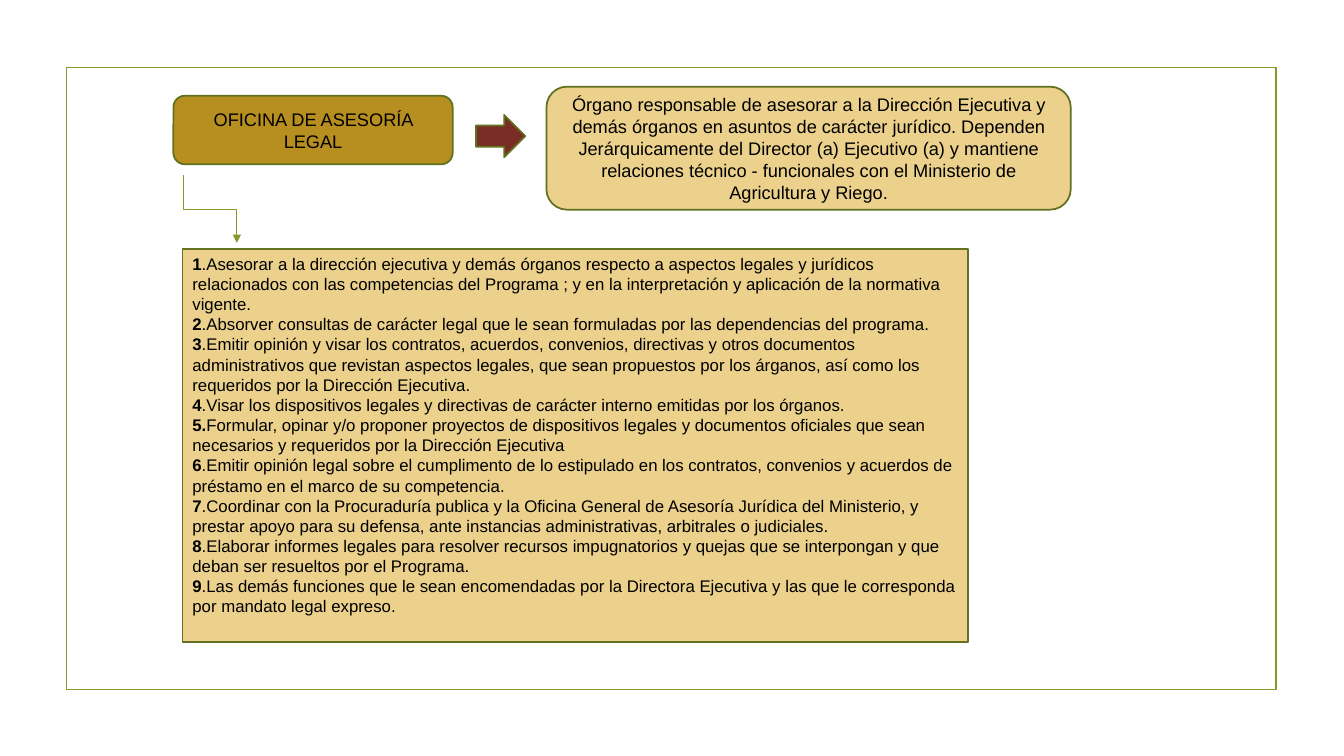
from dataclasses import dataclass
from typing import Optional

import pptx
import pptx.dml.color
import pptx.enum.shapes
import pptx.enum.text
import pptx.oxml
import pptx.oxml.ns
import pptx.util

Inches = pptx.util.Inches
Pt = pptx.util.Pt
RGBColor = pptx.dml.color.RGBColor
Shape = pptx.enum.shapes.MSO_SHAPE
Align = pptx.enum.text.PP_ALIGN

BLACK = RGBColor(0x00, 0x00, 0x00)
GREEN = RGBColor(0x83, 0x99, 0x2A)
DARK_GREEN = RGBColor(0x61, 0x71, 0x1F)
GOLD = RGBColor(0xB7, 0x8E, 0x20)
SAND = RGBColor(0xEB, 0xD1, 0x8C)
MAROON = RGBColor(0x7A, 0x2D, 0x26)


@dataclass
class Block:
    kind: Shape
    left: float
    top: float
    width: float
    height: float
    fill: Optional[RGBColor] = None
    line: RGBColor = DARK_GREEN


FRAME = Block(Shape.RECTANGLE, 0.66, 0.67, 12, 6.17, line=GREEN)
OFFICE = Block(Shape.ROUNDED_RECTANGLE, 1.72, 0.95, 2.77, 0.68, GOLD)
ROLE = Block(Shape.ROUNDED_RECTANGLE, 5.42, 0.86, 5.2, 1.22, SAND)
ARROW = Block(Shape.RIGHT_ARROW, 4.72, 1.14, 0.49, 0.42, MAROON)
DUTIES_BOX = Block(Shape.RECTANGLE, 1.81, 2.47, 7.79, 3.9, SAND)

OFFICE_TEXT = "OFICINA DE ASESORÍA LEGAL"
ROLE_TEXT = (
    "Órgano responsable de asesorar a la Dirección Ejecutiva y demás órganos en asuntos "
    "de carácter jurídico. Dependen Jerárquicamente del Director (a) Ejecutivo (a) y "
    "mantiene relaciones técnico - funcionales con el Ministerio de Agricultura y Riego."
)
DUTIES = [
    ("1", ".Asesorar a la dirección ejecutiva y demás órganos respecto a aspectos legales y "
     "jurídicos relacionados con las competencias del Programa ; y en la interpretación y "
     "aplicación de la normativa vigente."),
    ("2", ".Absorver consultas de carácter legal que le sean formuladas por las dependencias "
     "del programa."),
    ("3", ".Emitir opinión y visar los contratos, acuerdos, convenios, directivas y otros "
     "documentos administrativos que revistan aspectos legales, que sean propuestos por los "
     "árganos, así como los requeridos por la Dirección Ejecutiva."),
    ("4", ".Visar los dispositivos legales y directivas de carácter interno emitidas por los "
     "órganos."),
    ("5.", "Formular, opinar y/o proponer proyectos de dispositivos legales y documentos "
     "oficiales que sean necesarios y requeridos por la Dirección Ejecutiva"),
    ("6", ".Emitir opinión legal sobre el cumplimento de lo estipulado en los contratos, "
     "convenios y acuerdos de préstamo en el marco de su competencia."),
    ("7", ".Coordinar con la Procuraduría publica y la Oficina General de Asesoría Jurídica "
     "del Ministerio, y prestar apoyo para su defensa, ante instancias administrativas, "
     "arbitrales o judiciales."),
    ("8", ".Elaborar informes legales para resolver recursos impugnatorios y quejas que se "
     "interpongan y que deban ser resueltos por el Programa."),
    ("9", ".Las demás funciones que le sean encomendadas por la Directora Ejecutiva y las que "
     "le corresponda por mandato legal expreso."),
]


def add_block(page: pptx.slide.Slide, block: Block) -> pptx.shapes.autoshape.Shape:
    shape = page.shapes.add_shape(
        block.kind, Inches(block.left), Inches(block.top),
        Inches(block.width), Inches(block.height),
    )
    shape.shadow.inherit = False
    if block.fill is None:
        shape.fill.background()
    else:
        shape.fill.solid()
        shape.fill.fore_color.rgb = block.fill
    shape.line.color.rgb = block.line
    shape.line.width = Pt(1.25)
    return shape


def write(box: pptx.shapes.autoshape.Shape, text: list[tuple[str, str]], *, size: float,
          align: Align, bottom: float = 0.05) -> None:
    frame = box.text_frame
    frame.word_wrap = True
    frame.vertical_anchor = pptx.enum.text.MSO_ANCHOR.MIDDLE
    frame.margin_bottom = Inches(bottom)
    for index, (lead, body) in enumerate(text):
        para = frame.add_paragraph() if index else frame.paragraphs[0]
        para.alignment = align
        for words, bold in ((lead, True), (body, False)):
            if words:
                span = para.add_run()
                span.text = words
                span.font.name = "Arial"
                span.font.size = Pt(size)
                span.font.bold = bold
                span.font.color.rgb = BLACK


def add_bent_arrow(page: pptx.slide.Slide, start: tuple[float, float],
                   end: tuple[float, float]) -> None:
    center_x, center_y = (start[0] + end[0]) / 2, (start[1] + end[1]) / 2
    half_run, half_rise = (end[1] - start[1]) / 2, (end[0] - start[0]) / 2
    connector = page.shapes.add_connector(
        pptx.enum.shapes.MSO_CONNECTOR.ELBOW,
        Inches(center_x + half_run), Inches(center_y - half_rise),
        Inches(center_x - half_run), Inches(center_y + half_rise),
    )
    connector.line.color.rgb = GREEN
    connector.line.width = Pt(0.75)
    properties = connector._element.spPr
    properties.find(pptx.oxml.ns.qn("a:xfrm")).set("rot", str(270 * 60000))
    namespace = pptx.oxml.ns.nsdecls("a")
    line = properties.find(pptx.oxml.ns.qn("a:ln"))
    line.append(pptx.oxml.parse_xml(f'<a:tailEnd {namespace} type="triangle"/>'))
    properties.append(pptx.oxml.parse_xml(f"<a:effectLst {namespace}/>"))


def main() -> None:
    deck = pptx.Presentation()
    deck.slide_width = Inches(13.33)
    deck.slide_height = Inches(7.5)
    page = deck.slides.add_slide(deck.slide_layouts[6])

    add_block(page, FRAME)
    write(add_block(page, OFFICE), [("", OFFICE_TEXT)], size=13, align=Align.CENTER)
    write(add_block(page, ROLE), [("", ROLE_TEXT)], size=13, align=Align.CENTER)
    add_block(page, ARROW)
    write(add_block(page, DUTIES_BOX), DUTIES, size=12, align=Align.LEFT, bottom=0.26)
    add_bent_arrow(page, (1.82, 1.74), (2.35, 2.41))

    deck.save("out.pptx")


if __name__ == "__main__":
    main()
